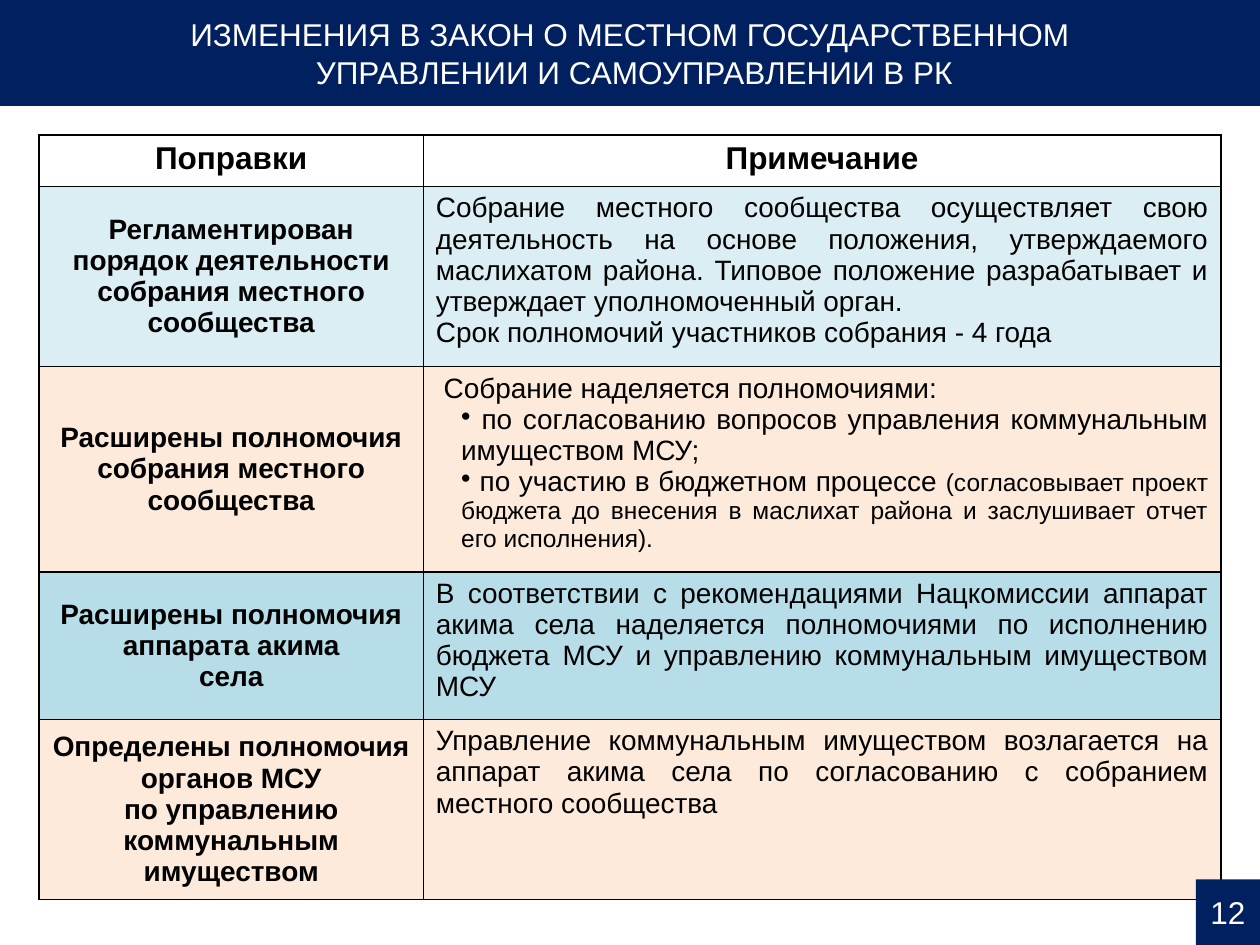
from lxml.etree import SubElement
from pptx import Presentation
from pptx.dml.color import RGBColor
from pptx.enum.shapes import MSO_SHAPE as Shape
from pptx.enum.text import MSO_ANCHOR as Anchor, PP_ALIGN as Align
from pptx.oxml.ns import qn
from pptx.util import Inches, Pt

WIDTH, HEIGHT = 10, 7.5
NAVY, WHITE, BLACK = "002060", "FFFFFF", "000000"
PALE_BLUE, BLUE, PEACH = "DBEEF4", "B7DEE8", "FDEADA"

TITLE = ["ИЗМЕНЕНИЯ В ЗАКОН О МЕСТНОМ ГОСУДАРСТВЕННОМ",
         " УПРАВЛЕНИИ И САМОУПРАВЛЕНИИ В РК"]
PAGE = ["12"]
HEADINGS = ["Поправки", "Примечание"]
BULLET = "•"
AMENDMENTS = [
    (1.43, PALE_BLUE,
     ["Регламентирован порядок деятельности собрания местного сообщества"],
     ["Собрание местного сообщества осуществляет свою деятельность на основе "
      "положения, утверждаемого маслихатом района. Типовое положение "
      "разрабатывает и утверждает уполномоченный орган.",
      "Срок полномочий участников собрания - 4 года"]),
    (1.63, PEACH,
     ["Расширены полномочия собрания местного сообщества"],
     [" Собрание наделяется полномочиями:",
      "• по согласованию вопросов управления коммунальным имуществом МСУ;",
      ("• по участию в бюджетном процессе ",
       "(согласовывает проект бюджета до внесения в маслихат района "
       "и заслушивает отчет его исполнения).")]),
    (1.17, BLUE,
     ["Расширены полномочия аппарата акима\vсела"],
     ["В соответствии с рекомендациями Нацкомиссии аппарат акима села "
      "наделяется полномочиями по исполнению бюджета МСУ и управлению "
      "коммунальным имуществом МСУ"]),
    (1.43, PEACH,
     ["Определены полномочия органов МСУ",
      "по управлению коммунальным имуществом"],
     ["Управление коммунальным имуществом возлагается на аппарат акима села "
      "по согласованию с собранием местного сообщества"]),
]
TABLE_LEFT, TABLE_TOP = 0.31, 1.07
COLUMNS = [3.05, 6.33]
ROWS = [0.41] + [amendment[0] for amendment in AMENDMENTS]
BANNER_HEIGHT = 0.84
PAGE_WIDTH, PAGE_HEIGHT = 0.51, 0.52


def rgb(value):
    """Turn a hex string into a colour."""
    return RGBColor.from_string(value)


def style(run, size, color, bold):
    """Give a run its font."""
    settings = {"name": "Arial", "size": Pt(size), "bold": bold}
    for key, value in settings.items():
        setattr(run.font, key, value)
    run.font.color.rgb = rgb(color)


def write(frame, lines, size, align, color=BLACK, bold=False):
    """Write paragraphs, each a string or a (main, smaller detail) pair."""
    for index, line in enumerate(lines):
        main, detail = (line, "") if isinstance(line, str) else line
        paragraph = frame.add_paragraph() if index else frame.paragraphs[0]
        paragraph.alignment = align
        paragraph.text = main.removeprefix(BULLET)
        for run in paragraph.runs:
            style(run, size, color, bold)
        if detail:
            run = paragraph.add_run()
            run.text = detail
            style(run, size - 2, color, bold)
        if main.startswith(BULLET):
            properties = paragraph._p.get_or_add_pPr()
            properties.set("marL", str(Inches(0.2)))
            properties.set("indent", "0")
            SubElement(properties, qn("a:buChar"), char=BULLET)


def add_label(slide, box, lines):
    """Add a navy rectangle with white text."""
    label = slide.shapes.add_shape(Shape.RECTANGLE, *map(Inches, box))
    label.shadow.inherit = False
    label.fill.solid()
    label.fill.fore_color.rgb = rgb(NAVY)
    label.line.fill.background()
    label.text_frame.word_wrap = True
    label.text_frame.vertical_anchor = Anchor.MIDDLE
    write(label.text_frame, lines, 18, Align.CENTER, WHITE)


def format_cell(cell, fill, anchor):
    """Set a cell's borders, fill and anchor."""
    properties = cell._tc.get_or_add_tcPr()
    for side in ("lnL", "lnR", "lnT", "lnB"):
        border = SubElement(properties, qn(f"a:{side}"), w=str(Pt(1)))
        SubElement(SubElement(border, qn("a:solidFill")), qn("a:srgbClr"), val=BLACK)
    cell.fill.solid()
    cell.fill.fore_color.rgb = rgb(fill)
    cell.vertical_anchor = anchor


def add_amendments(slide):
    """Add the table of amendments and notes."""
    box = (TABLE_LEFT, TABLE_TOP, sum(COLUMNS), sum(ROWS))
    table = slide.shapes.add_table(len(ROWS), len(COLUMNS), *map(Inches, box)).table
    for column, width in zip(table.columns, COLUMNS):
        column.width = Inches(width)
    for row, height in zip(table.rows, ROWS):
        row.height = Inches(height)
    for index, heading in enumerate(HEADINGS):
        cell = table.cell(0, index)
        format_cell(cell, WHITE, Anchor.TOP)
        write(cell.text_frame, [heading], 18, Align.CENTER, bold=True)
    for index, (_, fill, subject, note) in enumerate(AMENDMENTS, 1):
        subject_cell, note_cell = table.cell(index, 0), table.cell(index, 1)
        format_cell(subject_cell, fill, Anchor.MIDDLE)
        write(subject_cell.text_frame, subject, 16, Align.CENTER, bold=True)
        format_cell(note_cell, fill, Anchor.TOP)
        write(note_cell.text_frame, note, 16, Align.JUSTIFY)


def main():
    """Build the slide and save it."""
    deck = Presentation()
    deck.slide_width, deck.slide_height = Inches(WIDTH), Inches(HEIGHT)
    slide = deck.slides.add_slide(deck.slide_layouts[6])
    add_label(slide, (0, 0, WIDTH, BANNER_HEIGHT), TITLE)
    add_amendments(slide)
    add_label(slide, (WIDTH - PAGE_WIDTH, HEIGHT - PAGE_HEIGHT,
                      PAGE_WIDTH, PAGE_HEIGHT), PAGE)
    deck.save("out.pptx")


if __name__ == "__main__":
    main()
